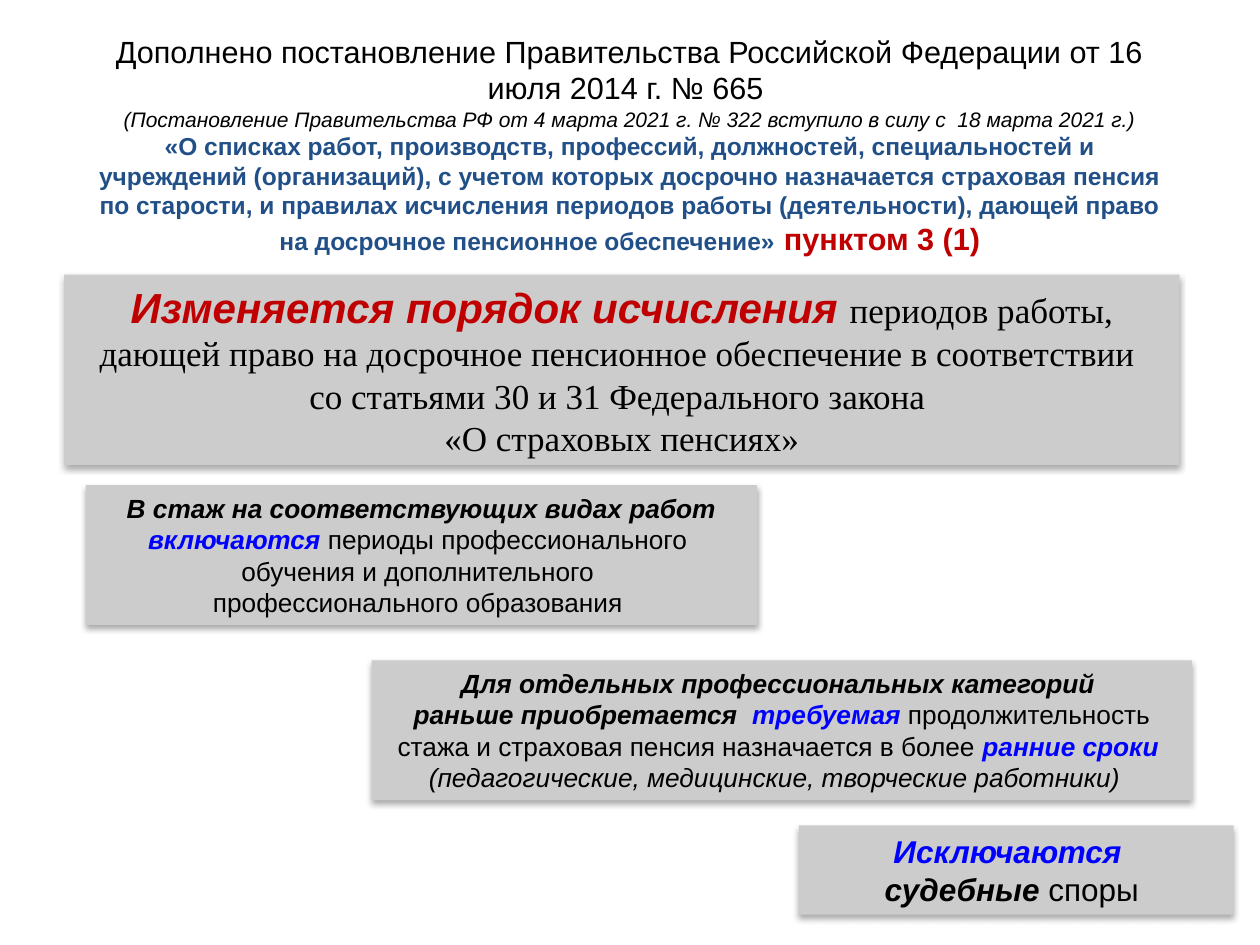
from dataclasses import dataclass

import pptx
import pptx.dml.color
import pptx.enum.shapes
import pptx.enum.text
import pptx.oxml
import pptx.oxml.ns
import pptx.util
from pptx.util import Inches


@dataclass(frozen=True)
class Theme:
    sans: str = "Arial"
    serif: str = "Times New Roman"
    black: str = "000000"
    navy: str = "214F87"
    red: str = "C00000"
    blue: str = "0000FF"
    panel: str = "CCCCCC"
    note: float = 12
    decree: float = 14
    body: float = 15
    heading: float = 17.5
    outcome: float = 18
    statement: float = 20
    accent: float = 24


THEME = Theme()


def add_run(paragraph, text, size=THEME.body, color=THEME.black,
            font=THEME.sans, bold=False, italic=False):
    """Add one formatted piece of text to a paragraph."""
    run = paragraph.add_run()
    run.text = text
    run.font.size = pptx.util.Pt(size)
    run.font.name = font
    run.font.bold = bold
    run.font.italic = italic
    run.font.color.rgb = pptx.dml.color.RGBColor.from_string(color)


def fill_text(frame, paragraphs):
    """Write centred paragraphs, each a list of (text, format) pairs."""
    frame.word_wrap = True
    frame.auto_size = pptx.enum.text.MSO_AUTO_SIZE.SHAPE_TO_FIT_TEXT
    for index, pieces in enumerate(paragraphs):
        paragraph = frame.paragraphs[0] if index == 0 else frame.add_paragraph()
        paragraph.alignment = pptx.enum.text.PP_ALIGN.CENTER
        for text, style in pieces:
            add_run(paragraph, text, **style)


def add_shadow(shape):
    """Give the shape a soft shadow that falls straight down."""
    shape.shadow.inherit = False
    effects = shape._element.spPr.find(pptx.oxml.ns.qn("a:effectLst"))
    effects.append(pptx.oxml.parse_xml(
        f'<a:outerShdw {pptx.oxml.ns.nsdecls("a")} blurRad="{pptx.util.Pt(3.5)}" '
        f'dist="{pptx.util.Pt(2.2)}" dir="5400000" rotWithShape="0">'
        f'<a:srgbClr val="{THEME.black}"><a:alpha val="32000"/></a:srgbClr>'
        '</a:outerShdw>'))


def add_heading(slide, box, paragraphs):
    """Place the decree heading in its box."""
    heading = slide.shapes.add_textbox(*map(Inches, box))
    fill_text(heading.text_frame, paragraphs)


def add_panel(slide, box, paragraphs):
    """Place a grey shadowed panel in its box."""
    panel = slide.shapes.add_shape(
        pptx.enum.shapes.MSO_SHAPE.RECTANGLE, *map(Inches, box))
    panel.fill.solid()
    panel.fill.fore_color.rgb = pptx.dml.color.RGBColor.from_string(THEME.panel)
    panel.line.fill.background()
    add_shadow(panel)
    panel.text_frame.vertical_anchor = pptx.enum.text.MSO_ANCHOR.MIDDLE
    fill_text(panel.text_frame, paragraphs)


# Text formats
PLAIN = {}
ITALIC = dict(italic=True)
STRONG = dict(bold=True, italic=True)
KEY = dict(STRONG, color=THEME.blue)
STATEMENT = dict(size=THEME.statement, font=THEME.serif)
OUTCOME = dict(size=THEME.outcome)

# Decree heading
DECREE = [
    [("Дополнено постановление Правительства Российской Федерации "
      "от 16 июля 2014 г. № 665 ", dict(size=THEME.heading))],
    [("(Постановление Правительства РФ от 4 марта 2021 г. № 322 "
      "вступило в силу с  18 марта 2021 г.)",
      dict(size=THEME.note, italic=True))],
    [("«О списках работ, производств, профессий, должностей, специальностей "
      "и учреждений (организаций), с учетом которых досрочно назначается "
      "страховая пенсия по старости, и правилах исчисления периодов работы "
      "(деятельности), дающей право на досрочное пенсионное обеспечение»",
      dict(size=THEME.decree, color=THEME.navy, bold=True)),
     (" пунктом 3 (1)",
      dict(size=THEME.heading, color=THEME.red, bold=True))],
]

# Panels from top to bottom: box and paragraphs
PANELS = [
    ((0.51, 2.18, 8.85, 1.51), [
        [("Изменяется порядок исчисления ",
          dict(STRONG, size=THEME.accent, color=THEME.red)),
         ("периодов работы, дающей право на досрочное пенсионное "
          "обеспечение в соответствии ", STATEMENT)],
        [("со статьями 30 и 31 Федерального закона ", STATEMENT)],
        [("«О страховых пенсиях»", STATEMENT)],
    ]),
    ((0.68, 3.85, 5.33, 1.11), [
        [("В стаж на соответствующих видах работ ", STRONG),
         ("включаются ", KEY),
         ("периоды профессионального ", PLAIN)],
        [("обучения и дополнительного ", PLAIN)],
        [("профессионального образования ", PLAIN)],
    ]),
    ((2.95, 5.24, 6.51, 1.11), [
        [("Для отдельных профессиональных категорий ", STRONG)],
        [("раньше приобретается  ", STRONG),
         ("требуемая ", KEY),
         ("продолжительность стажа и страховая пенсия назначается "
          "в более ", PLAIN),
         ("ранние сроки ", KEY)],
        [("(педагогические, медицинские, творческие работники)  ", ITALIC)],
    ]),
    ((6.34, 6.55, 3.45, 0.71), [
        [("Исключаются  ", KEY | OUTCOME)],
        [("судебные", STRONG | OUTCOME), (" споры ", OUTCOME)],
    ]),
]


def main():
    deck = pptx.Presentation()
    deck.slide_width = Inches(10)
    deck.slide_height = Inches(7.5)
    slide = deck.slides.add_slide(deck.slide_layouts[6])
    add_heading(slide, (0.67, 0.21, 8.66, 1.89), DECREE)
    for box, paragraphs in PANELS:
        add_panel(slide, box, paragraphs)
    deck.save("out.pptx")


if __name__ == "__main__":
    main()
